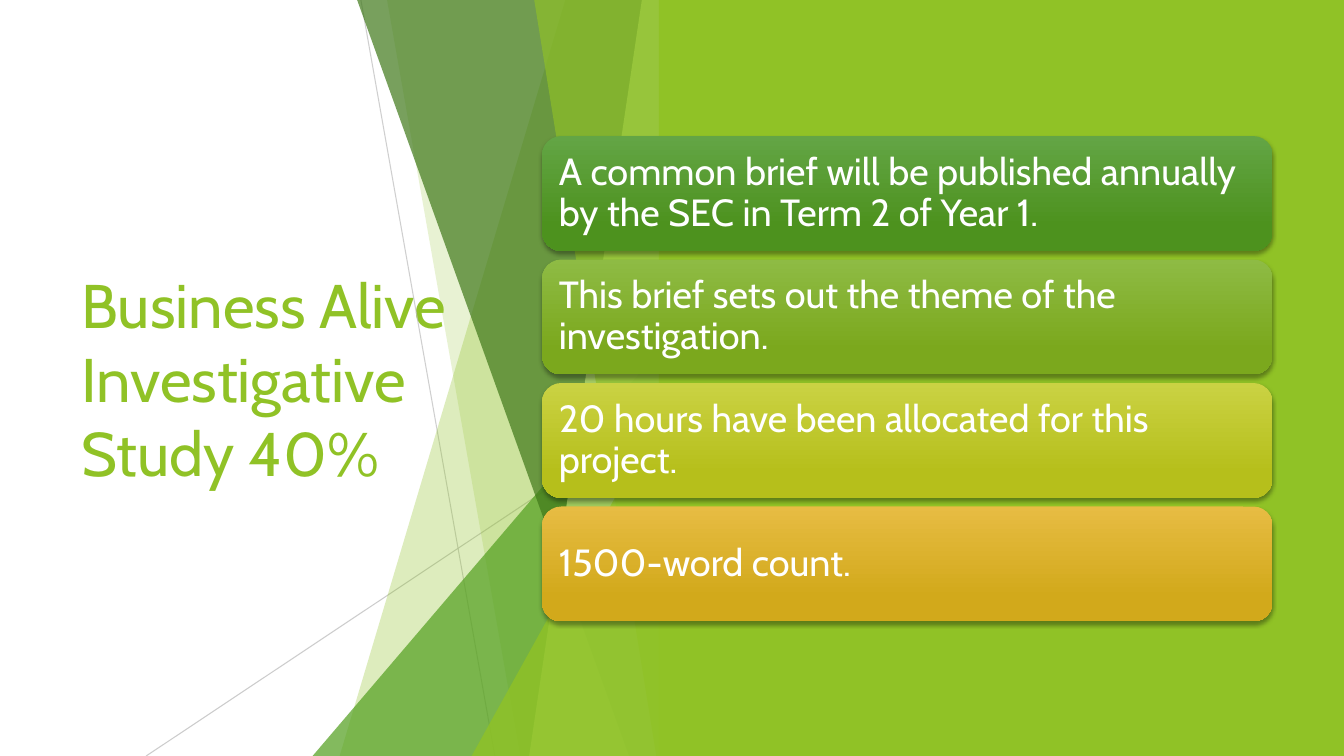
from lxml.etree import SubElement
from pptx import Presentation
from pptx.dml.color import RGBColor
from pptx.enum.shapes import MSO_CONNECTOR, MSO_SHAPE
from pptx.enum.text import MSO_ANCHOR, PP_ALIGN
from pptx.oxml.ns import qn
from pptx.util import Pt

COLORS = {
    "white": "FFFFFF",
    "black": "000000",
    "lime": "90C226",
    "leaf": "54A021",
    "forest": "3F7819",
    "pale": "C0E474",
    "hairline": "BFBFBF",
}
FONT = "Cabin"
SLIDE_WIDTH, SLIDE_HEIGHT = 960, 540
FACET_RIGHT = 479.6

# Card text with the top and bottom colours of its gradient
CARDS = [
    ("A common brief will be published annually by the SEC in Term 2 of Year 1.",
     "63A545", "4D921E"),
    ("This brief sets out the theme of the investigation.", "8EBB44", "7BA81D"),
    ("20 hours have been allocated for this project.", "CAD243", "B6BF1B"),
    ("1500-word count.", "E7BC43", "D2A91B"),
]
CARD_LEFT, CARD_TOP = 387.2, 97.2
CARD_WIDTH, CARD_HEIGHT, CARD_PITCH = 521.8, 82.1, 88.2


def rgb(name):
    return RGBColor.from_string(COLORS[name])


def set_opacity(shape, percent):
    for color in shape._element.spPr.iter(qn("a:srgbClr")):
        SubElement(color, qn("a:alpha"), val=str(percent * 1000))


def paint(shape, color, opacity=100):
    shape.shadow.inherit = False
    shape.fill.solid()
    shape.fill.fore_color.rgb = rgb(color)
    shape.line.fill.background()
    if opacity < 100:
        set_opacity(shape, opacity)


def add_hairline(slide, start, end, opacity):
    line = slide.shapes.add_connector(
        MSO_CONNECTOR.STRAIGHT, *(Pt(value) for value in start + end))
    line.line.color.rgb = rgb("hairline")
    line.line.width = Pt(0.75)
    set_opacity(line, opacity)
    SubElement(line._element.spPr, qn("a:effectLst"))


def add_facet(slide, top_left, bottom_left, color, opacity):
    """Full-height panel with a slanted left edge."""
    builder = slide.shapes.build_freeform(Pt(top_left), Pt(-0.6))
    builder.add_line_segments([
        (Pt(FACET_RIGHT), Pt(-0.6)),
        (Pt(FACET_RIGHT), Pt(SLIDE_HEIGHT)),
        (Pt(bottom_left), Pt(SLIDE_HEIGHT)),
    ], close=True)
    paint(builder.convert_to_shape(), color, opacity)


def add_corner(slide, left, top, color, opacity):
    """Right triangle rising to the right edge of the facets."""
    shape = slide.shapes.add_shape(
        MSO_SHAPE.ISOSCELES_TRIANGLE, Pt(left), Pt(top),
        Pt(FACET_RIGHT - left), Pt(SLIDE_HEIGHT - top))
    shape.adjustments[0] = 1
    paint(shape, color, opacity)


def add_panel(slide, left):
    panel = slide.shapes.add_shape(
        MSO_SHAPE.RECTANGLE, Pt(left), 0, Pt(SLIDE_WIDTH - left), Pt(SLIDE_HEIGHT))
    paint(panel, "lime")


def write(shape, text, size, color):
    frame = shape.text_frame
    frame.word_wrap = True
    frame.vertical_anchor = MSO_ANCHOR.MIDDLE
    paragraph = frame.paragraphs[0]
    paragraph.alignment = PP_ALIGN.LEFT
    run = paragraph.add_run()
    run.text = text
    run.font.name = FONT
    run.font.size = Pt(size)
    run.font.color.rgb = rgb(color)
    return frame


def add_title(slide, text):
    box = slide.shapes.add_textbox(Pt(51.1), Pt(108.7), Pt(279.4), Pt(322.6))
    write(box, text, 44, "lime")


def add_shadow(shape):
    shape.shadow.inherit = False
    effects = shape._element.spPr.find(qn("a:effectLst"))
    shadow = SubElement(
        effects, qn("a:outerShdw"), blurRad=str(Pt(3)), dist=str(Pt(2)),
        dir="5400000", algn="ctr", rotWithShape="0")
    color = SubElement(shadow, qn("a:srgbClr"), val=COLORS["black"])
    SubElement(color, qn("a:alpha"), val="35000")


def add_card(slide, top, text, top_color, bottom_color):
    card = slide.shapes.add_shape(
        MSO_SHAPE.ROUNDED_RECTANGLE, Pt(CARD_LEFT), Pt(top),
        Pt(CARD_WIDTH), Pt(CARD_HEIGHT))
    card.fill.gradient()
    card.fill.gradient_angle = 270
    stops = zip(card.fill.gradient_stops, (0, 0.78), (top_color, bottom_color))
    for stop, position, color in stops:
        stop.position = position
        stop.color.rgb = RGBColor.from_string(color)
    card.line.fill.background()
    add_shadow(card)
    frame = write(card, text, 27, "white")
    frame.margin_left = frame.margin_right = Pt(8)
    frame.margin_top = frame.margin_bottom = Pt(8)
    frame.paragraphs[0].line_spacing = 0.9


def main():
    presentation = Presentation()
    presentation.slide_width = Pt(SLIDE_WIDTH)
    presentation.slide_height = Pt(SLIDE_HEIGHT)
    slide = presentation.slides.add_slide(presentation.slide_layouts[6])

    add_title(slide, "Business Alive Investigative Study 40%")

    # Faceted background, back to front
    add_hairline(slide, (257.8, 0), (353.5, SLIDE_HEIGHT), 75)
    add_hairline(slide, (FACET_RIGHT, 290.2), (104.4, SLIDE_HEIGHT), 80)
    add_facet(slide, 404, 242.6, "lime", 30)
    add_facet(slide, 276.4, 371.6, "lime", 20)
    add_corner(slide, 223.3, 239.8, "leaf", 72)
    add_facet(slide, 254.9, 449.3, "forest", 70)
    add_facet(slide, 458.6, 378, "pale", 70)
    add_facet(slide, 381.5, 468.8, "lime", 65)
    add_corner(slide, 336.9, 283, "lime", 80)
    add_panel(slide, 470.7)

    # Stacked cards
    for index, card in enumerate(CARDS):
        add_card(slide, CARD_TOP + index * CARD_PITCH, *card)

    presentation.save("out.pptx")


if __name__ == "__main__":
    main()
